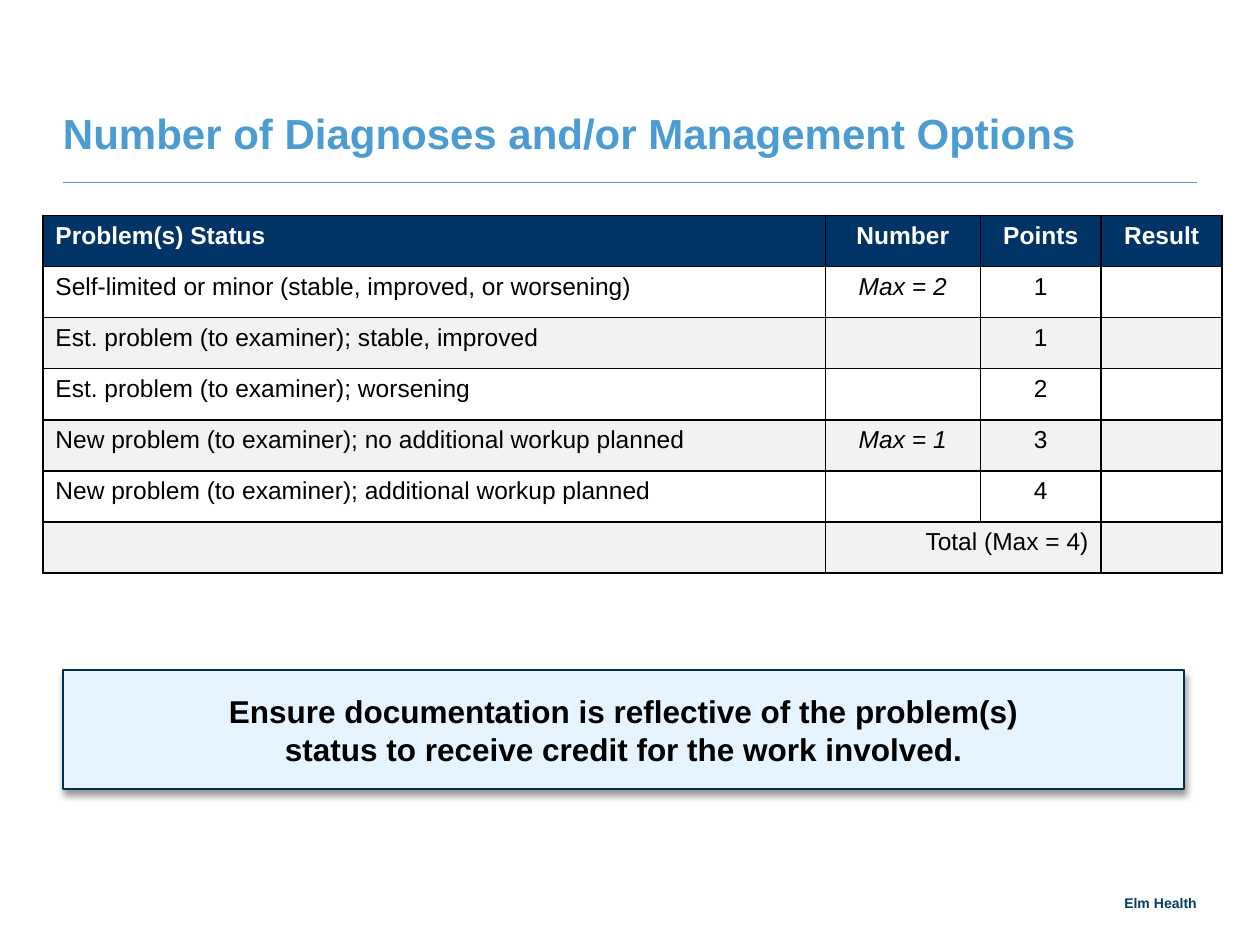
from lxml.etree import SubElement
from pptx import Presentation
from pptx.dml.color import RGBColor
from pptx.enum.shapes import MSO_CONNECTOR, MSO_SHAPE
from pptx.enum.text import MSO_ANCHOR as Anchor, PP_ALIGN as Align
from pptx.oxml.ns import qn
from pptx.util import Inches, Pt

COLORS = {
    "sky": "4B9CD3", "navy": "003366", "footer": "004163", "edge": "003049",
    "pale": "E5F4FF", "band": "F2F2F2", "white": "FFFFFF", "black": "000000",
}
COLUMN_WIDTHS = [6.21, 1.23, 0.96, 0.96]
ROW_HEIGHT = 2.84 / 7
ROWS = [
    ["Problem(s) Status", "Number", "Points", "Result"],
    ["Self-limited or minor (stable, improved, or worsening)", "Max = 2", "1", ""],
    ["Est. problem (to examiner); stable, improved", "", "1", ""],
    ["Est. problem (to examiner); worsening", "", "2", ""],
    ["New problem (to examiner); no additional workup planned", "Max = 1", "3", ""],
    ["New problem (to examiner); additional workup planned", "", "4", ""],
    ["", "Total (Max = 4)", "", ""],
]


def rgb(name):
    return RGBColor.from_string(COLORS[name])


def write(frame, text, size=14, color="black", bold=False, italic=False,
          align=Align.LEFT, spacing=None):
    """Fill a text frame, one paragraph for each line of text."""
    frame.text = text
    for paragraph in frame.paragraphs:
        paragraph.alignment = align
        paragraph.line_spacing = spacing
        for run in paragraph.runs:
            font = run.font
            font.name, font.size = "Arial", Pt(size)
            font.bold, font.italic = bold, italic
            font.color.rgb = rgb(color)


def add_color(parent, name):
    fill = SubElement(parent, qn("a:solidFill"))
    return SubElement(fill, qn("a:srgbClr"), val=COLORS[name])


def add_borders(cell):
    """Draw a thin line on all four sides; lines must precede the fill."""
    properties = cell._tc.get_or_add_tcPr()
    for side in ("lnL", "lnR", "lnT", "lnB"):
        add_color(SubElement(properties, qn(f"a:{side}"), w=str(Pt(1))), "black")


class SlideBuilder:
    def __init__(self, slide):
        self.shapes = slide.shapes

    def text(self, text, left, top, width, height, **style):
        frame = self.shapes.add_textbox(
            Inches(left), Inches(top), Inches(width), Inches(height)).text_frame
        frame.word_wrap = True
        frame.vertical_anchor = Anchor.BOTTOM
        frame.margin_left = frame.margin_right = 0
        frame.margin_top = frame.margin_bottom = 0
        write(frame, text, **style)

    def rule(self, left, right, y):
        rule = self.shapes.add_connector(
            MSO_CONNECTOR.STRAIGHT, Inches(left), Inches(y), Inches(right), Inches(y))
        rule.line.color.rgb = rgb("sky")
        rule.line.width = Pt(0.5)
        SubElement(rule._element.spPr, qn("a:effectLst"))

    def table(self, rows, left, top):
        table = self.shapes.add_table(
            len(rows), len(COLUMN_WIDTHS), Inches(left), Inches(top),
            Inches(sum(COLUMN_WIDTHS)), Inches(ROW_HEIGHT * len(rows))).table
        for column, width in zip(table.columns, COLUMN_WIDTHS):
            column.width = Inches(width)
        for r, labels in enumerate(rows):
            table.rows[r].height = Inches(ROW_HEIGHT)
            header = r == 0
            background = "navy" if header else "white" if r % 2 else "band"
            for c, label in enumerate(labels):
                cell = table.cell(r, c)
                add_borders(cell)
                cell.fill.solid()
                cell.fill.fore_color.rgb = rgb(background)
                align = (Align.RIGHT if label.startswith("Total")
                         else Align.CENTER if c else Align.LEFT)
                write(cell.text_frame, label, color="white" if header else "black",
                      bold=header, italic=label.startswith("Max"), align=align)
        last = len(rows) - 1
        table.cell(last, 1).merge(table.cell(last, 2))

    def callout(self, text, left, top, width, height):
        box = self.shapes.add_shape(
            MSO_SHAPE.RECTANGLE, Inches(left), Inches(top), Inches(width), Inches(height))
        box.fill.solid()
        box.fill.fore_color.rgb = rgb("pale")
        box.line.color.rgb = rgb("edge")
        box.line.width = Pt(1)
        box.shadow.inherit = False
        effects = box._element.spPr.find(qn("a:effectLst"))
        shadow = SubElement(effects, qn("a:outerShdw"), blurRad=str(Pt(4)),
                            dist=str(Pt(3)), dir="5400000", rotWithShape="0")
        SubElement(add_shadow_color(shadow), qn("a:alpha"), val="40000")
        box.text_frame.word_wrap = True
        box.text_frame.vertical_anchor = Anchor.MIDDLE
        write(box.text_frame, text, size=18, bold=True, align=Align.CENTER)


def add_shadow_color(shadow):
    return SubElement(shadow, qn("a:srgbClr"), val=COLORS["black"])


def main():
    deck = Presentation()
    deck.slide_width, deck.slide_height = Inches(10), Inches(7.5)
    builder = SlideBuilder(deck.slides.add_slide(deck.slide_layouts[6]))
    builder.text("Elm Health", 8.27, 7, 1.23, 0.23, size=8, color="footer",
                 bold=True, align=Align.RIGHT)
    builder.rule(0.5, 9.5, 1.45)
    builder.text("Number of Diagnoses and/or Management Options", 0.5, 0.38, 9, 0.87,
                 size=24, color="sky", bold=True, spacing=Pt(28))
    builder.table(ROWS, 0.34, 1.71)
    builder.callout("Ensure documentation is reflective of the problem(s)\n"
                    "status to receive credit for the work involved.",
                    0.5, 5.32, 8.9, 0.94)
    deck.save("out.pptx")


if __name__ == "__main__":
    main()
